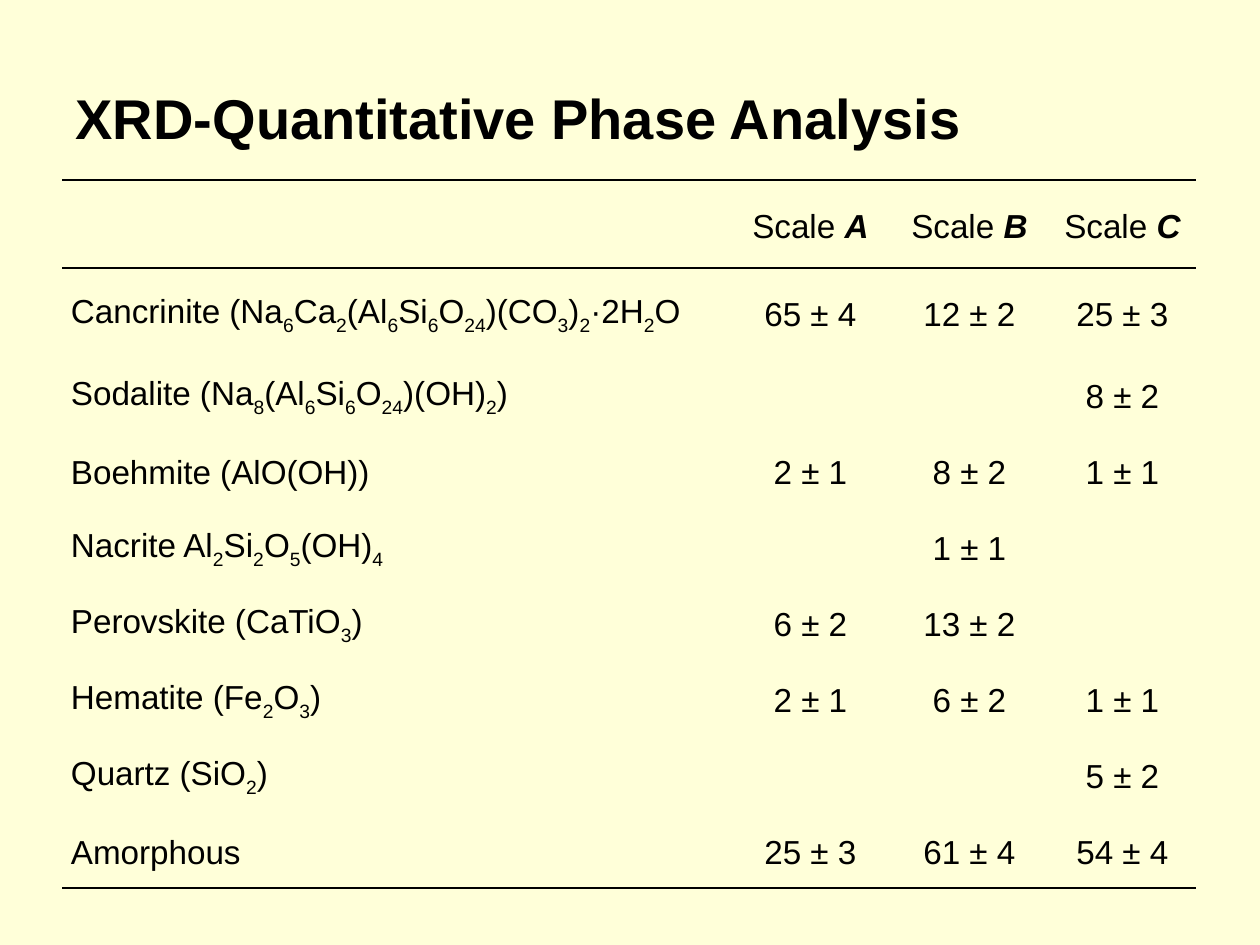
import dataclasses
import itertools

import lxml.etree
import pptx
import pptx.dml.color
import pptx.enum.text
import pptx.oxml.ns
import pptx.util

PX = 914400 // 126
ALIGN = pptx.enum.text.PP_ALIGN
MIDDLE = pptx.enum.text.MSO_ANCHOR.MIDDLE


@dataclasses.dataclass(frozen=True)
class Theme:
    font: str = "Arial"
    paper: str = "FFFFD9"
    ink: str = "000000"
    title: int = 32
    body: int = 19
    rule: int = 1


THEME = Theme()
COLS = [669, 159, 159, 147]
ROWS = [88, 88] + [76] * 7
SCALES = "ABC"
PHASES = [
    ("Cancrinite (Na6Ca2(Al6Si6O24)(CO3)2·2H2O", "65 ± 4", "12 ± 2", "25 ± 3"),
    ("Sodalite (Na8(Al6Si6O24)(OH)2)", "", "", "8 ± 2"),
    ("Boehmite (AlO(OH))", "2 ± 1", "8 ± 2", "1 ± 1"),
    ("Nacrite Al2Si2O5(OH)4", "", "1 ± 1", ""),
    ("Perovskite (CaTiO3)", "6 ± 2", "13 ± 2", ""),
    ("Hematite (Fe2O3)", "2 ± 1", "6 ± 2", "1 ± 1"),
    ("Quartz (SiO2)", "", "", "5 ± 2"),
    ("Amorphous", "25 ± 3", "61 ± 4", "54 ± 4"),
]


def rgb(code):
    return pptx.dml.color.RGBColor.from_string(code)


def add_run(para, text, size, bold=False, slant=False, sub=False):
    run = para.add_run()
    run.text = text
    font = run.font
    font.name, font.size = THEME.font, pptx.util.Pt(size)
    font.bold, font.italic = bold, slant
    font.color.rgb = rgb(THEME.ink)
    if sub:
        font._element.set("baseline", "-25000")


def add_phase(para, text):
    """Set digits as subscripts, save for a count that follows a dot."""
    last = ""
    for digit, group in itertools.groupby(text, str.isdigit):
        part = "".join(group)
        add_run(para, part, THEME.body, sub=digit and not last.endswith("·"))
        last = part


def add_scale(para, name):
    add_run(para, "Scale ", THEME.body)
    add_run(para, name, THEME.body, bold=True, slant=True)


def add_value(para, text):
    add_run(para, text, THEME.body)


def set_edges(cell, ruled):
    """Draw the sides named in ruled and hide the others."""
    props = cell._tc.get_or_add_tcPr()
    qn = pptx.oxml.ns.qn
    for side in "LRTB":
        line = lxml.etree.SubElement(props, qn("a:ln" + side))
        if side in ruled:
            line.set("w", str(pptx.util.Pt(THEME.rule)))
            fill = lxml.etree.SubElement(line, qn("a:solidFill"))
            lxml.etree.SubElement(fill, qn("a:srgbClr"), val=THEME.ink)
        else:
            lxml.etree.SubElement(line, qn("a:noFill"))


def fill_cell(cell, text, write, align, ruled):
    set_edges(cell, ruled)
    cell.fill.background()
    cell.vertical_anchor = MIDDLE
    cell.margin_left = cell.margin_right = 9 * PX
    cell.margin_top = cell.margin_bottom = 0
    if text:
        para = cell.text_frame.paragraphs[0]
        para.alignment = align
        para.line_spacing = 1.15
        para.space_before = para.space_after = pptx.util.Pt(2)
        write(para, text)


def add_title(slide, left, top, width, height):
    title = slide.shapes.title
    title.left, title.top = left * PX, top * PX
    title.width, title.height = width * PX, height * PX
    frame = title.text_frame
    frame.vertical_anchor = MIDDLE
    para = frame.paragraphs[0]
    para.alignment = ALIGN.LEFT
    add_run(para, "XRD-Quantitative Phase Analysis", THEME.title, bold=True)


def add_grid(slide, left, top):
    frame = slide.shapes.add_table(
        len(ROWS), len(COLS), left * PX, top * PX, sum(COLS) * PX, sum(ROWS) * PX
    )
    table = frame.table
    table.first_row = table.horz_banding = False
    for col, width in zip(table.columns, COLS):
        col.width = width * PX
    for row, height in zip(table.rows, ROWS):
        row.height = height * PX
    edges = {0: "TB", 1: "T", len(PHASES): "B"}
    for i, texts in enumerate([("", *SCALES)] + PHASES):
        for j, text in enumerate(texts):
            write = add_scale if i == 0 else add_value if j else add_phase
            align = ALIGN.CENTER if j else ALIGN.LEFT
            fill_cell(table.cell(i, j), text, write, align, edges.get(i, ""))


def main():
    deck = pptx.Presentation()
    deck.slide_width, deck.slide_height = 1260 * PX, 945 * PX
    slide = deck.slides.add_slide(deck.slide_layouts[5])
    slide.background.fill.solid()
    slide.background.fill.fore_color.rgb = rgb(THEME.paper)
    add_title(slide, 63, 38, 1134, 158)
    add_grid(slide, 62, 180)
    deck.save("out.pptx")


if __name__ == "__main__":
    main()
